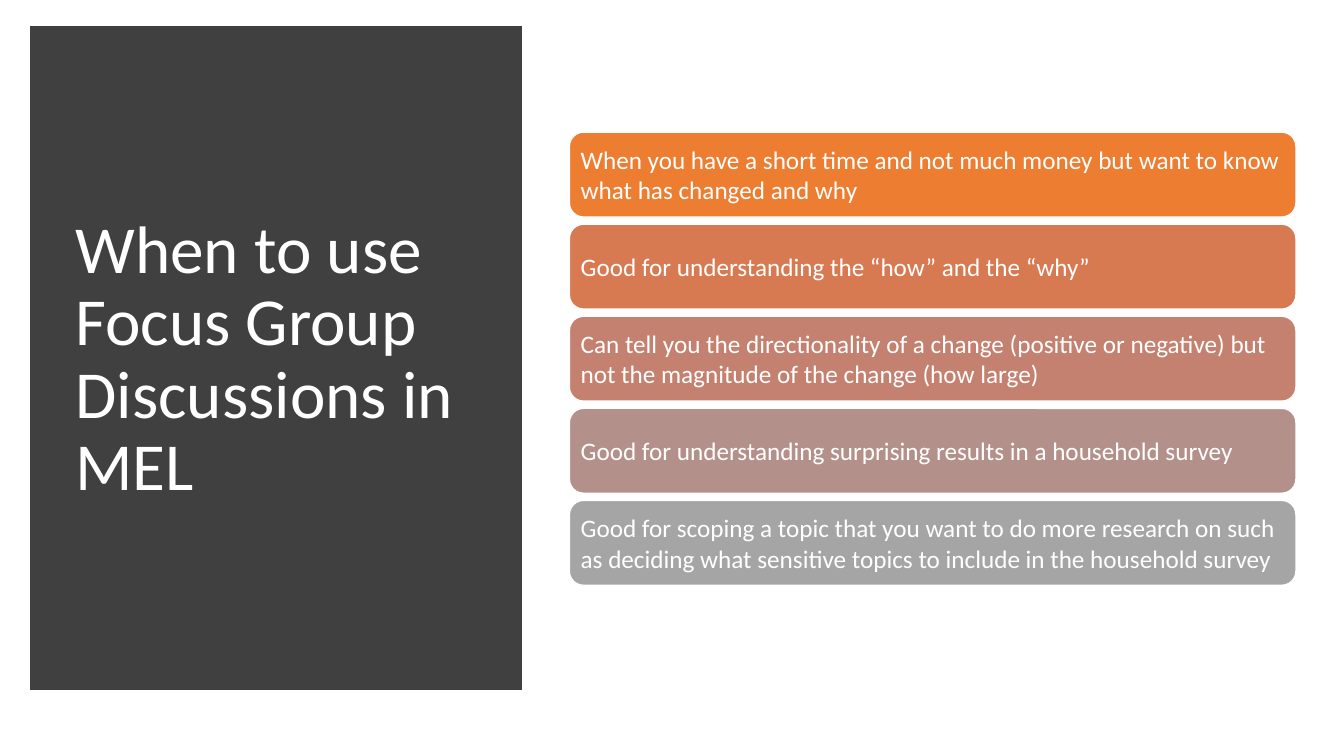
from dataclasses import dataclass

from lxml.etree import SubElement
from pptx import Presentation
from pptx.dml.color import RGBColor
from pptx.enum.shapes import MSO_SHAPE
from pptx.enum.text import MSO_ANCHOR, MSO_AUTO_SIZE, PP_ALIGN
from pptx.oxml.ns import qn
from pptx.shapes.autoshape import Shape
from pptx.slide import Slide
from pptx.util import Cm, Pt


@dataclass(frozen=True)
class Theme:
    font: str = "Calibri"
    panel: str = "404040"
    light: str = "FFFFFF"
    title_size: int = 48
    card_size: int = 18


@dataclass(frozen=True)
class Box:
    left: float
    top: float
    width: float
    height: float


@dataclass(frozen=True)
class Card:
    text: str
    fill: str


THEME = Theme()
PANEL_BOX = Box(0.94, 0.84, 12.04, 16.38)
TITLE_BOX = Box(1.65, 1.78, 10.57, 14.6)
FIRST_CARD_BOX = Box(14.35, 3.33, 18.31, 2.14)
CARD_PITCH = 2.32
CARD_INSET = 0.28

TITLE = "When to use Focus Group Discussions in MEL"
CARDS = [
    Card("When you have a short time and not much money but want to know "
         "what has changed and why", "ED7D31"),
    Card("Good for understanding the “how” and the “why”", "D87A51"),
    Card("Can tell you the directionality of a change (positive or negative) "
         "but not the magnitude of the change (how large)", "C48170"),
    Card("Good for understanding surprising results in a household survey",
         "B4908B"),
    Card("Good for scoping a topic that you want to do more research on such "
         "as deciding what sensitive topics to include in the household survey",
         "A5A5A5"),
]


def add_block(page: Slide, kind: MSO_SHAPE, box: Box, fill: str,
              line: str, line_width: float) -> Shape:
    block = page.shapes.add_shape(kind, Cm(box.left), Cm(box.top),
                                  Cm(box.width), Cm(box.height))
    block.shadow.inherit = False
    block.fill.solid()
    block.fill.fore_color.rgb = RGBColor.from_string(fill)
    block.line.color.rgb = RGBColor.from_string(line)
    block.line.width = Pt(line_width)
    return block


def write_text(shape: Shape, text: str, size: int, spacing: float) -> None:
    frame = shape.text_frame
    frame.text = text
    frame.word_wrap = True
    frame.auto_size = MSO_AUTO_SIZE.NONE
    frame.vertical_anchor = MSO_ANCHOR.MIDDLE
    para = frame.paragraphs[0]
    para.alignment = PP_ALIGN.LEFT
    para.line_spacing = spacing
    for span in para.runs:
        span.font.name = THEME.font
        span.font.size = Pt(size)
        span.font.color.rgb = RGBColor.from_string(THEME.light)


def add_title_panel(page: Slide) -> None:
    title = page.shapes.title
    title.left, title.top = Cm(TITLE_BOX.left), Cm(TITLE_BOX.top)
    title.width, title.height = Cm(TITLE_BOX.width), Cm(TITLE_BOX.height)
    write_text(title, TITLE, THEME.title_size, 0.9)

    # Square-cornered panel, placed behind the title
    panel = add_block(page, MSO_SHAPE.RECTANGLE, PANEL_BOX,
                      THEME.panel, THEME.panel, 10)
    outline = panel.element.spPr.find(qn("a:ln"))
    SubElement(outline, qn("a:miter"), lim="800000")
    title.element.addprevious(panel.element)


def add_card(page: Slide, card: Card, row: int) -> None:
    first = FIRST_CARD_BOX
    box = Box(first.left, first.top + row * CARD_PITCH,
              first.width, first.height)
    shape = add_block(page, MSO_SHAPE.ROUNDED_RECTANGLE, box,
                      card.fill, THEME.light, 1)
    frame = shape.text_frame
    # The rounded corners already add 0.1 cm to every inset
    frame.margin_left = frame.margin_right = Cm(CARD_INSET - 0.1)
    frame.margin_top = frame.margin_bottom = Cm(CARD_INSET - 0.1)
    write_text(shape, card.text, THEME.card_size, 1.0)


def main() -> None:
    deck = Presentation()
    deck.slide_width, deck.slide_height = Cm(33.87), Cm(19.05)
    page = deck.slides.add_slide(deck.slide_layouts[5])

    # Title on the left
    add_title_panel(page)

    # Stack of cards on the right
    for row, card in enumerate(CARDS):
        add_card(page, card, row)

    deck.save("out.pptx")


if __name__ == "__main__":
    main()
